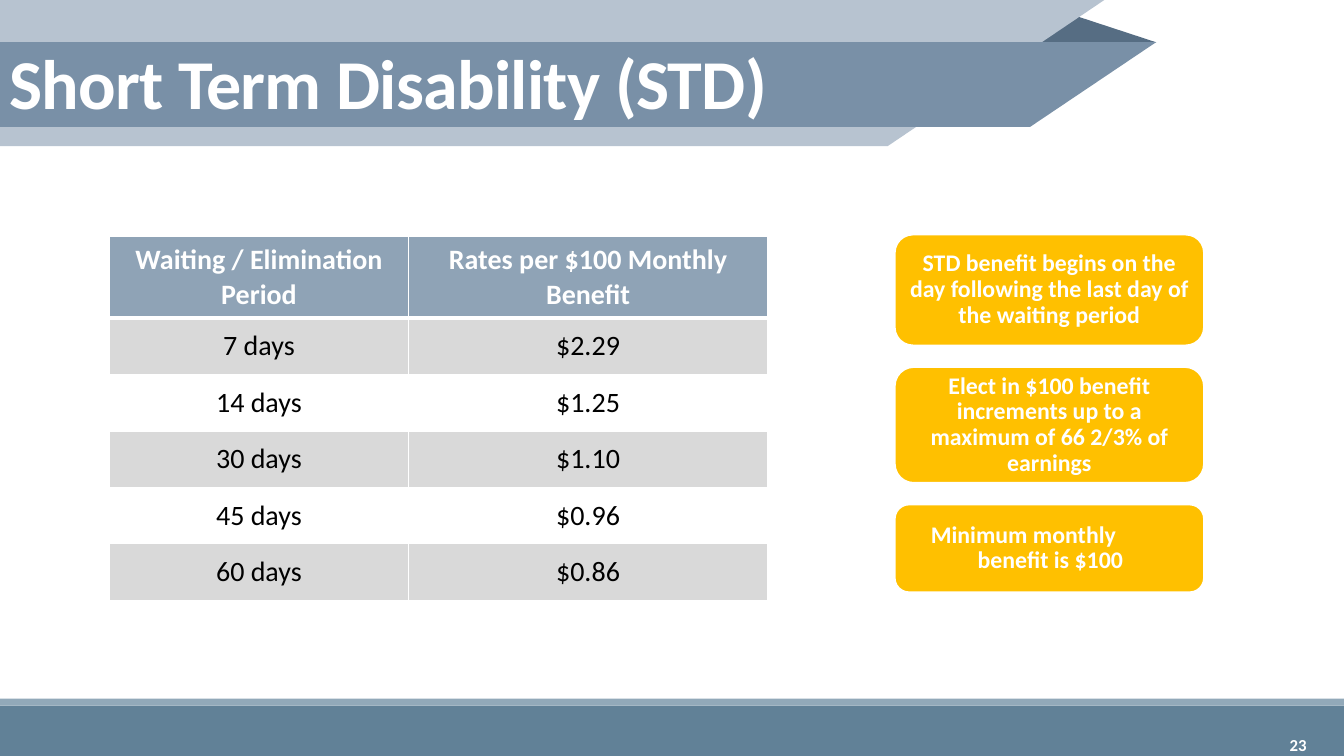
from lxml.etree import SubElement
from pptx import Presentation
from pptx.dml.color import RGBColor
from pptx.enum.shapes import MSO_SHAPE as Shape
from pptx.enum.text import MSO_ANCHOR as Anchor, PP_ALIGN as Align
from pptx.oxml.ns import qn
from pptx.util import Pt

FONT = "Calibri"
WHITE = RGBColor(0xFF, 0xFF, 0xFF)
BLACK = RGBColor(0, 0, 0)
GREY = RGBColor(0xD9, 0xD9, 0xD9)
HEAD = RGBColor(0x8F, 0xA3, 0xB6)
GOLD = RGBColor(0xFF, 0xC0, 0x00)
PALE = RGBColor(0xB7, 0xC3, 0xD0)
BAND = RGBColor(0x79, 0x90, 0xA7)
FOLD = RGBColor(0x56, 0x6D, 0x83)
FOOT = RGBColor(0x61, 0x81, 0x97)
STRIPE = RGBColor(0x92, 0xA9, 0xB9)

RATES = [
    ("Waiting / Elimination Period", "Rates per $100 Monthly Benefit"),
    ("7 days", "$2.29"),
    ("14 days", "$1.25"),
    ("30 days", "$1.10"),
    ("45 days", "$0.96"),
    ("60 days", "$0.86"),
]
# Text and height of each note; \v breaks the line
NOTES = [
    ("STD benefit begins on the day following the last day of "
     "the waiting period", 79.9),
    ("Elect in $100 benefit increments up to a maximum of 66 2/3% of "
     "earnings", 83.5),
    ("Minimum monthly\vbenefit is $100", 63.4),
]


def style(para, size, color, bold=True, align=Align.CENTER):
    para.alignment = align
    font = para.font
    font.name, font.size, font.bold = FONT, Pt(size), bold
    font.color.rgb = color


def paint(shape, color):
    shape.shadow.inherit = False
    shape.fill.solid()
    shape.fill.fore_color.rgb = color
    shape.line.fill.background()


def add_poly(slide, color, points):
    start, *rest = [(Pt(x), Pt(y)) for x, y in points]
    build = slide.shapes.build_freeform(*start)
    build.add_line_segments(rest)
    paint(build.convert_to_shape(), color)


def add_bar(slide, color, top, height):
    bar = slide.shapes.add_shape(Shape.RECTANGLE, 0, Pt(top), Pt(960), Pt(height))
    paint(bar, color)


def set_title(slide, text):
    title = slide.shapes.title
    title.left, title.top, title.width, title.height = (
        Pt(-0.7), Pt(33.8), Pt(879), Pt(77))
    slide.shapes._spTree.append(title._element)  # in front of the banner
    frame = title.text_frame
    frame.text = text
    frame.vertical_anchor = Anchor.TOP
    para = frame.paragraphs[0]
    style(para, 50, WHITE, align=Align.LEFT)
    para.line_spacing = 0.85
    para.runs[0]._r.get_or_add_rPr().set("spc", "-50")


def add_edges(cell, foot):
    props = cell._tc.get_or_add_tcPr()
    for side, width in zip("LRTB", (1, 1, 1, foot)):
        line = SubElement(props, qn("a:ln" + side), w=str(Pt(width)))
        fill = SubElement(line, qn("a:solidFill"))
        SubElement(fill, qn("a:srgbClr"), val=str(WHITE))


def add_rates(slide):
    frame = slide.shapes.add_table(
        len(RATES), 2, Pt(78.1), Pt(169), Pt(470.2), Pt(260))
    table = frame.table
    table.first_row = table.horz_banding = False
    for col, width in zip(table.columns, (213.8, 256.4)):
        col.width = Pt(width)
    for i, texts in enumerate(RATES):
        head = i == 0
        table.rows[i].height = Pt(58.3 if head else 40.3)
        for cell, text in zip(table.rows[i].cells, texts):
            add_edges(cell, 3 if head else 1)
            if head or i % 2:
                cell.fill.solid()
                cell.fill.fore_color.rgb = HEAD if head else GREY
            else:
                cell.fill.background()
            cell.margin_left = cell.margin_right = Pt(10.8)
            cell.margin_top = cell.margin_bottom = Pt(4.3)
            cell.vertical_anchor = Anchor.MIDDLE
            cell.text = text
            style(cell.text_frame.paragraphs[0], 20,
                  WHITE if head else BLACK, bold=head)


def add_note(slide, text, top, height):
    box = slide.shapes.add_shape(
        Shape.ROUNDED_RECTANGLE, Pt(638.8), Pt(top), Pt(221.6), Pt(height))
    paint(box, GOLD)
    box.line.color.rgb = WHITE
    box.line.width = Pt(2)
    frame = box.text_frame
    frame.word_wrap = True
    frame.vertical_anchor = Anchor.MIDDLE
    frame.margin_left = frame.margin_right = Pt(5)
    frame.margin_top = frame.margin_bottom = Pt(5)
    frame.text = text
    para = frame.paragraphs[0]
    para.line_spacing = 0.9
    style(para, 17, WHITE)
    if "\v" in text:  # second line set further in
        para.alignment = Align.LEFT
        props = para._p.get_or_add_pPr()
        props.set("marL", str(Pt(51.5)))
        props.set("indent", str(Pt(-33.5)))


def add_number(slide, text):
    box = slide.shapes.add_textbox(Pt(837.4), Pt(517.7), Pt(103), Pt(28.8))
    frame = box.text_frame
    frame.word_wrap = True
    frame.vertical_anchor = Anchor.MIDDLE
    frame.text = text
    style(frame.paragraphs[0], 12, WHITE, align=Align.RIGHT)


def main():
    deck = Presentation()
    deck.slide_width, deck.slide_height = Pt(960), Pt(540)
    slide = deck.slides.add_slide(deck.slide_layouts[5])

    # Footer
    add_bar(slide, FOOT, 504, 36)
    add_bar(slide, STRIPE, 499, 5)

    # Folded banner
    add_poly(slide, FOLD, [(735, 30.2), (764.6, 10.1), (825.8, 30.2)])
    add_poly(slide, PALE, [(0, 0), (788.8, 0), (634, 104.4), (0, 104.4)])
    add_poly(slide, BAND, [(0, 30.2), (825.8, 30.2), (735.8, 90.7), (0, 90.7)])
    set_title(slide, "Short Term Disability (STD)")

    # Rates and notes
    add_rates(slide)
    top = 167.2
    for text, height in NOTES:
        add_note(slide, text, top, height)
        top += height + 14.7

    add_number(slide, "23")
    deck.save("out.pptx")


if __name__ == "__main__":
    main()
